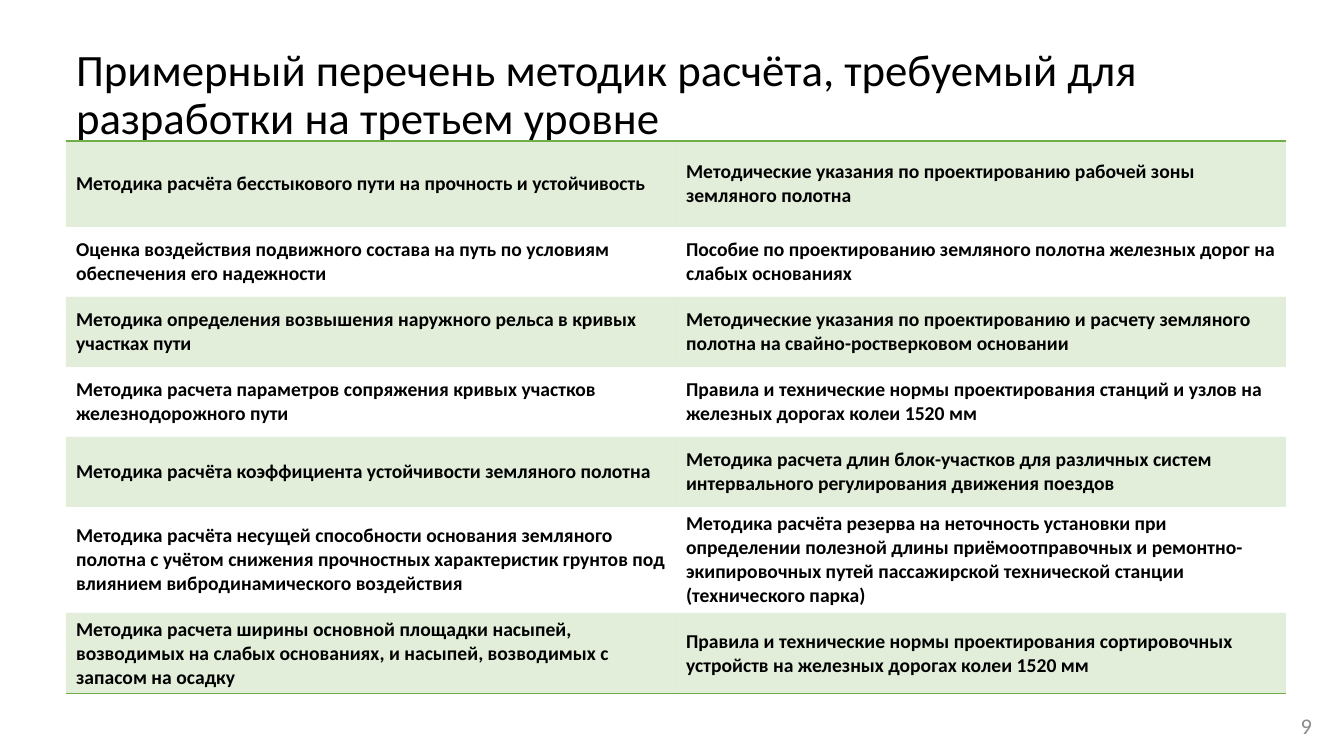
from lxml.etree import SubElement
from pptx import Presentation
from pptx.dml.color import RGBColor
from pptx.enum.text import MSO_ANCHOR as Anchor, PP_ALIGN as Align
from pptx.oxml import parse_xml
from pptx.oxml.ns import nsdecls, qn
from pptx.util import Pt

TITLE = "Примерный перечень методик расчёта, требуемый для разработки на третьем уровне"
NUMBER = "9"
ROWS = [
    ("Методика расчёта бесстыкового пути на прочность и устойчивость",
     "Методические указания по проектированию рабочей зоны земляного полотна"),
    ("Оценка воздействия подвижного состава на путь по условиям обеспечения его надежности",
     "Пособие по проектированию земляного полотна железных дорог на слабых основаниях"),
    ("Методика определения возвышения наружного рельса в кривых участках пути",
     "Методические указания по проектированию и расчету земляного полотна "
     "на свайно-ростверковом основании"),
    ("Методика расчета параметров сопряжения кривых участков железнодорожного пути",
     "Правила и технические нормы проектирования станций и узлов "
     "на железных дорогах колеи 1520 мм"),
    ("Методика расчёта коэффициента устойчивости земляного полотна",
     "Методика расчета длин блок-участков для различных систем "
     "интервального регулирования движения поездов"),
    ("Методика расчёта несущей способности основания земляного полотна с учётом снижения "
     "прочностных характеристик грунтов под влиянием вибродинамического воздействия",
     "Методика расчёта резерва на неточность установки при определении полезной длины "
     "приёмоотправочных и ремонтно-экипировочных путей пассажирской технической станции "
     "(технического парка)"),
    ("Методика расчета ширины основной площадки насыпей, возводимых на слабых основаниях, "
     "и насыпей, возводимых с запасом на осадку",
     "Правила и технические нормы проектирования сортировочных устройств "
     "на железных дорогах колеи 1520 мм"),
]
HEIGHTS = [86, 70, 70, 70, 70, 106, 81]
COL = 610
FONT = "Calibri"
BLACK = RGBColor(0x00, 0x00, 0x00)
GRAY = RGBColor(0x8C, 0x8C, 0x8C)
GREEN = RGBColor(0x70, 0xAD, 0x47)
PLAIN = "{2D5ABB26-0587-4C30-8999-92F81FD0307C}"
SCALE = 914400 / 100.8


def px(*sizes):
    return [round(size * SCALE) for size in sizes]


def style(par, size, color, bold=False):
    for run in par.runs:
        font = run.font
        font.name, font.size, font.bold = FONT, Pt(size), bold
        font.color.rgb = color


def tint(cell):
    """Fill a cell with green at 20% opacity."""
    cell.fill.solid()
    cell.fill.fore_color.rgb = GREEN
    color = cell.fill._xPr.find(".//" + qn("a:srgbClr"))
    SubElement(color, qn("a:alpha"), val="20000")


def edge(cell, side):
    """Draw a thin green line on one side of a cell: T or B."""
    line = parse_xml(
        f'<a:ln{side} {nsdecls("a")} w="12700"><a:solidFill>'
        f'<a:srgbClr val="{GREEN}"/></a:solidFill></a:ln{side}>')
    cell._tc.get_or_add_tcPr().insert(0, line)


deck = Presentation()
deck.slide_width, deck.slide_height = px(1344, 756)
slide = deck.slides.add_slide(deck.slide_layouts[5])

title = slide.shapes.title
title.left, title.top, title.width, title.height = px(66, 37, 1153, 118)
frame = title.text_frame
frame.text = TITLE
frame.word_wrap = True
frame.vertical_anchor = Anchor.MIDDLE
par = frame.paragraphs[0]
par.alignment, par.line_spacing = Align.LEFT, 0.9
style(par, 32, BLACK)

frame = slide.shapes.add_textbox(*px(1020, 706, 302, 40)).text_frame
frame.text = NUMBER
frame.word_wrap = True
frame.vertical_anchor = Anchor.MIDDLE
par = frame.paragraphs[0]
par.alignment = Align.RIGHT
style(par, 16, GRAY)

table = slide.shapes.add_table(
    len(ROWS), 2, *px(66, 141, 2 * COL, sum(HEIGHTS))).table
table.first_row = table.horz_banding = False
table._tbl.tblPr.find(qn("a:tableStyleId")).text = PLAIN
for col in table.columns:
    col.width, = px(COL)
for i, (texts, high) in enumerate(zip(ROWS, HEIGHTS)):
    table.rows[i].height, = px(high)
    for cell, text in zip(table.rows[i].cells, texts):
        cell.text = text
        cell.vertical_anchor = Anchor.MIDDLE
        style(cell.text_frame.paragraphs[0], 14, BLACK, True)
        if i % 2 == 0:
            tint(cell)
        else:
            cell.fill.background()
        if i == 0:
            edge(cell, "T")
        if i == len(ROWS) - 1:
            edge(cell, "B")

deck.save("out.pptx")
